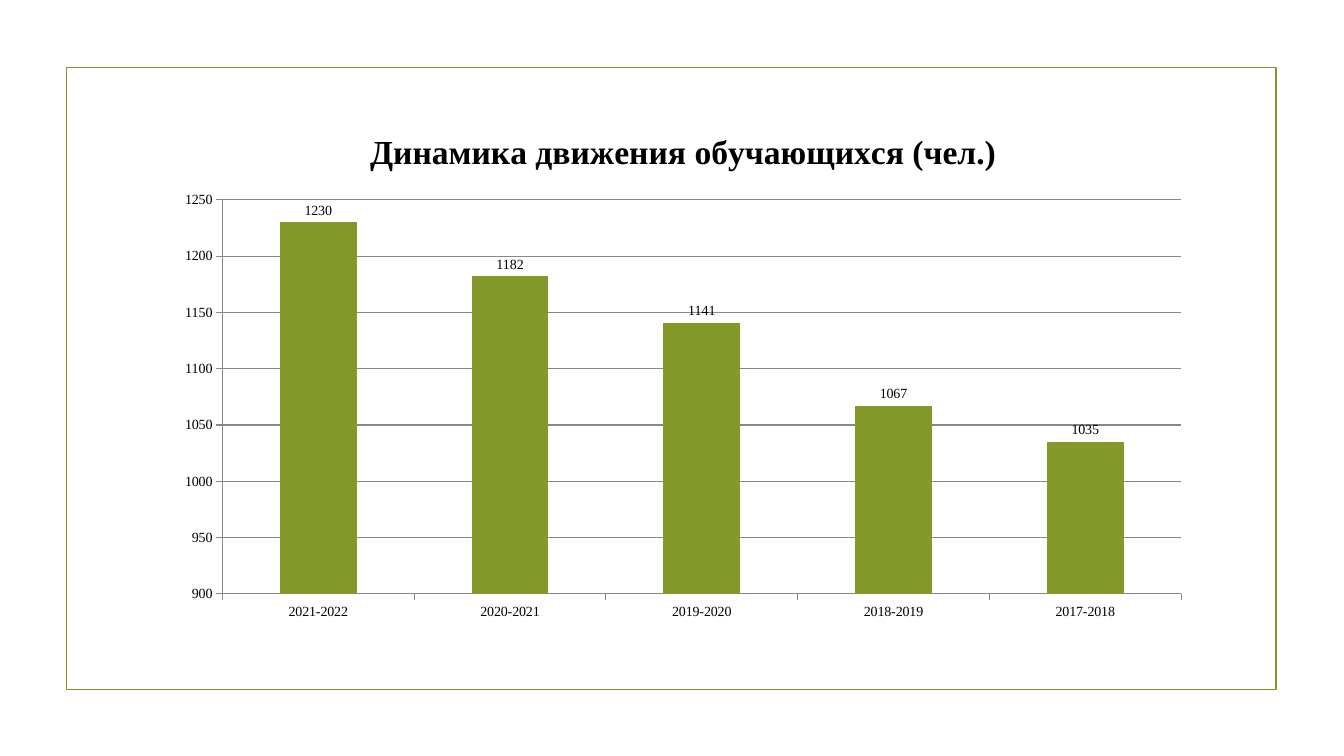
import pptx
import pptx.chart.data
import pptx.dml.color
import pptx.enum.chart
import pptx.enum.shapes
import pptx.util

Inches = pptx.util.Inches
Pt = pptx.util.Pt
RGBColor = pptx.dml.color.RGBColor

TITLE = "Динамика движения обучающихся (чел.)"
SERIES_NAME = "Обучающиеся"
STUDENTS = {
    "2021-2022": 1230,
    "2020-2021": 1182,
    "2019-2020": 1141,
    "2018-2019": 1067,
    "2017-2018": 1035,
}
FRAME_BOX = (0.66, 0.67, 12, 6.17)
CHART_BOX = (1.63, 1.07, 10.29, 5.18)
FONT = "Times New Roman"
GREEN = RGBColor(0x83, 0x99, 0x2A)
GRAY = RGBColor(0x87, 0x87, 0x87)
BLACK = RGBColor(0x00, 0x00, 0x00)


def format_font(font, size, bold=False, color=BLACK):
    font.name = FONT
    font.size = Pt(size)
    font.bold = bold
    font.color.rgb = color


def write_text(text_frame, text, **font_format):
    paragraph = text_frame.paragraphs[0]
    run = paragraph.add_run()
    run.text = text
    format_font(run.font, **font_format)


def add_frame(slide):
    frame = slide.shapes.add_shape(
        pptx.enum.shapes.MSO_SHAPE.RECTANGLE, *map(Inches, FRAME_BOX)
    )
    frame.shadow.inherit = False
    frame.fill.background()
    frame.line.color.rgb = GREEN
    frame.line.width = Pt(1.25)


def add_students_chart(slide):
    chart_data = pptx.chart.data.CategoryChartData()
    chart_data.categories = list(STUDENTS)
    chart_data.add_series(SERIES_NAME, list(STUDENTS.values()))
    chart = slide.shapes.add_chart(
        pptx.enum.chart.XL_CHART_TYPE.COLUMN_CLUSTERED,
        *map(Inches, CHART_BOX),
        chart_data,
    ).chart
    format_font(chart.font, size=10)
    chart.has_legend = False
    chart.has_title = True
    write_text(chart.chart_title.text_frame, TITLE, size=24, bold=True)
    chart.chart_title.include_in_layout = False

    for axis in (chart.category_axis, chart.value_axis):
        axis.major_tick_mark = pptx.enum.chart.XL_TICK_MARK.OUTSIDE
        axis.minor_tick_mark = pptx.enum.chart.XL_TICK_MARK.NONE
        axis.format.line.color.rgb = GRAY
        axis.format.line.width = Pt(0.75)
    value_axis = chart.value_axis
    value_axis.minimum_scale = 900
    value_axis.maximum_scale = 1250
    value_axis.major_unit = 50
    value_axis.has_major_gridlines = True
    value_axis.major_gridlines.format.line.color.rgb = GRAY
    value_axis.major_gridlines.format.line.width = Pt(0.75)

    plot = chart.plots[0]
    plot.gap_width = 150
    plot.vary_by_categories = False
    fill = plot.series[0].format.fill
    fill.solid()
    fill.fore_color.rgb = GREEN
    plot.has_data_labels = True
    labels = plot.data_labels
    labels.show_value = True
    labels.position = pptx.enum.chart.XL_LABEL_POSITION.OUTSIDE_END
    format_font(labels.font, size=10)


def main():
    presentation = pptx.Presentation()
    presentation.slide_width = Inches(13.33)
    presentation.slide_height = Inches(7.5)
    slide = presentation.slides.add_slide(presentation.slide_layouts[6])
    add_frame(slide)
    add_students_chart(slide)
    presentation.save("out.pptx")


if __name__ == "__main__":
    main()
